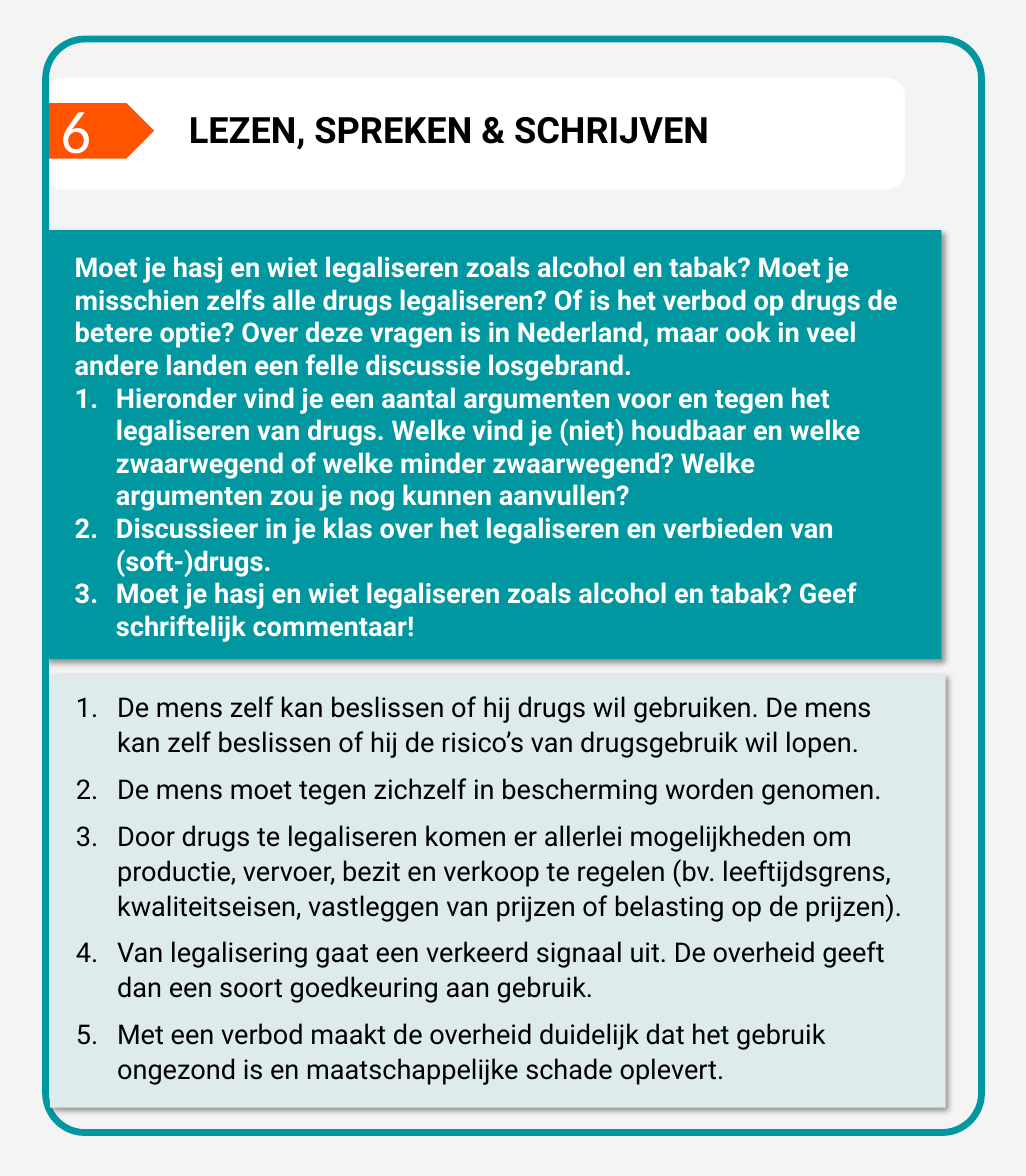
from lxml import etree
from pptx import Presentation
from pptx.dml.color import RGBColor
from pptx.enum.shapes import MSO_SHAPE
from pptx.oxml import parse_xml
from pptx.oxml.ns import qn
from pptx.util import Inches, Pt

RECT = MSO_SHAPE.RECTANGLE
ROUND = MSO_SHAPE.ROUNDED_RECTANGLE
ARROW = MSO_SHAPE.PENTAGON
TEAL, WHITE, BLACK = "0097A1", "FFFFFF", "000000"
HANG = Inches(0.38)
SHADOW = (
    '<a:outerShdw xmlns:a="http://schemas.openxmlformats.org/drawingml/2006/main" '
    'blurRad="50800" dist="38100" dir="2700000" algn="tl" rotWithShape="0">'
    '<a:srgbClr val="000000"><a:alpha val="40000"/></a:srgbClr></a:outerShdw>'
)

prs = Presentation()
prs.slide_width, prs.slide_height = Inches(9.45), Inches(10.83)
s = prs.slides.add_slide(prs.slide_layouts[6])
s.background.fill.solid()
s.background.fill.fore_color.rgb = RGBColor.from_string("F4F4F4")


def add_box(kind, at, fill=None, line=None, width=1, corner=None, shadow=False):
    sp = s.shapes.add_shape(kind, *map(Inches, at))
    sp.shadow.inherit = False
    if shadow:
        sp._element.spPr.find(qn("a:effectLst")).append(parse_xml(SHADOW))
    if corner is not None:
        sp.adjustments[0] = corner
    for part, color in ((sp.fill, fill), (sp.line.fill, line)):
        if color:
            part.solid()
            part.fore_color.rgb = RGBColor.from_string(color)
        else:
            part.background()
    if line:
        sp.line.width = Pt(width)


def add_text(at, lines, size, color, font="Roboto", bold=False, numbered_from=None):
    """Write one paragraph per line; number those from numbered_from on."""
    tf = s.shapes.add_textbox(*map(Inches, at)).text_frame
    tf.word_wrap = True
    tf.text = "\n".join(lines)
    for i, p in enumerate(tf.paragraphs):
        f = p.runs[0].font
        f.name, f.size, f.bold = font, Pt(size), bold
        f.color.rgb = RGBColor.from_string(color)
        if numbered_from is not None and i >= numbered_from:
            pPr = p._p.get_or_add_pPr()
            pPr.set("marL", str(HANG))
            pPr.set("indent", str(-HANG))
            etree.SubElement(pPr, qn("a:buAutoNum"), type="arabicPeriod")
    return tf


# Panel behind the assignment
add_box(RECT, (0.42, 2.12, 8.25, 3.95), TEAL, shadow=True)

# Heading with number
add_box(ROUND, (0.42, 0.72, 7.91, 1.02), WHITE, WHITE)
add_box(ARROW, (0.42, 0.95, 1, 0.51), "FF5300")
add_text((0.46, 0.81, 0.8, 0.77), ["6"], 40, WHITE, font="Calibri")
add_text((1.64, 0.94, 5.69, 0.5), ["LEZEN, SPREKEN & SCHRIJVEN"], 24, BLACK, bold=True)

# Frame around the page
add_box(ROUND, (0.42, 0.36, 8.62, 10.07), line=TEAL, width=4.5, corner=0.042)

# Assignment
assignment = [
    "Moet je hasj en wiet legaliseren zoals alcohol en tabak? Moet je misschien "
    "zelfs alle drugs legaliseren? Of is het verbod op drugs de betere optie? Over "
    "deze vragen is in Nederland, maar ook in veel andere landen een felle "
    "discussie losgebrand.",
    "Hieronder vind je een aantal argumenten voor en tegen het legaliseren van "
    "drugs. Welke vind je (niet) houdbaar en welke zwaarwegend of welke minder "
    "zwaarwegend? Welke argumenten zou je nog kunnen aanvullen?",
    "Discussieer in je klas over het legaliseren en verbieden van (soft-)drugs.",
    "Moet je hasj en wiet legaliseren zoals alcohol en tabak? Geef schriftelijk "
    "commentaar!",
]
add_text((0.59, 2.26, 7.84, 3.74), assignment, 18, WHITE, bold=True, numbered_from=1)

# Arguments
arguments = [
    "De mens zelf kan beslissen of hij drugs wil gebruiken. De mens kan zelf "
    "beslissen of hij de risico’s van drugsgebruik wil lopen.",
    "De mens moet tegen zichzelf in bescherming worden genomen.",
    "Door drugs te legaliseren komen er allerlei mogelijkheden om productie, "
    "vervoer, bezit en verkoop te regelen (bv. leeftijdsgrens, kwaliteitseisen, "
    "vastleggen van prijzen of belasting op de prijzen).",
    "Van legalisering gaat een verkeerd signaal uit. De overheid geeft dan een "
    "soort goedkeuring aan gebruik.",
    "Met een verbod maakt de overheid duidelijk dat het gebruik ongezond is en "
    "maatschappelijke schade oplevert.",
]
add_box(ROUND, (0.46, 6.21, 8.25, 3.99), "DEEBEC", corner=0, shadow=True)
tf = add_text((0.6, 6.29, 7.95, 3.77), arguments, 18, BLACK, numbered_from=0)
for p in tf.paragraphs:
    p.line_spacing = 1.07
    p.space_after = Pt(8)

prs.save("out.pptx")
